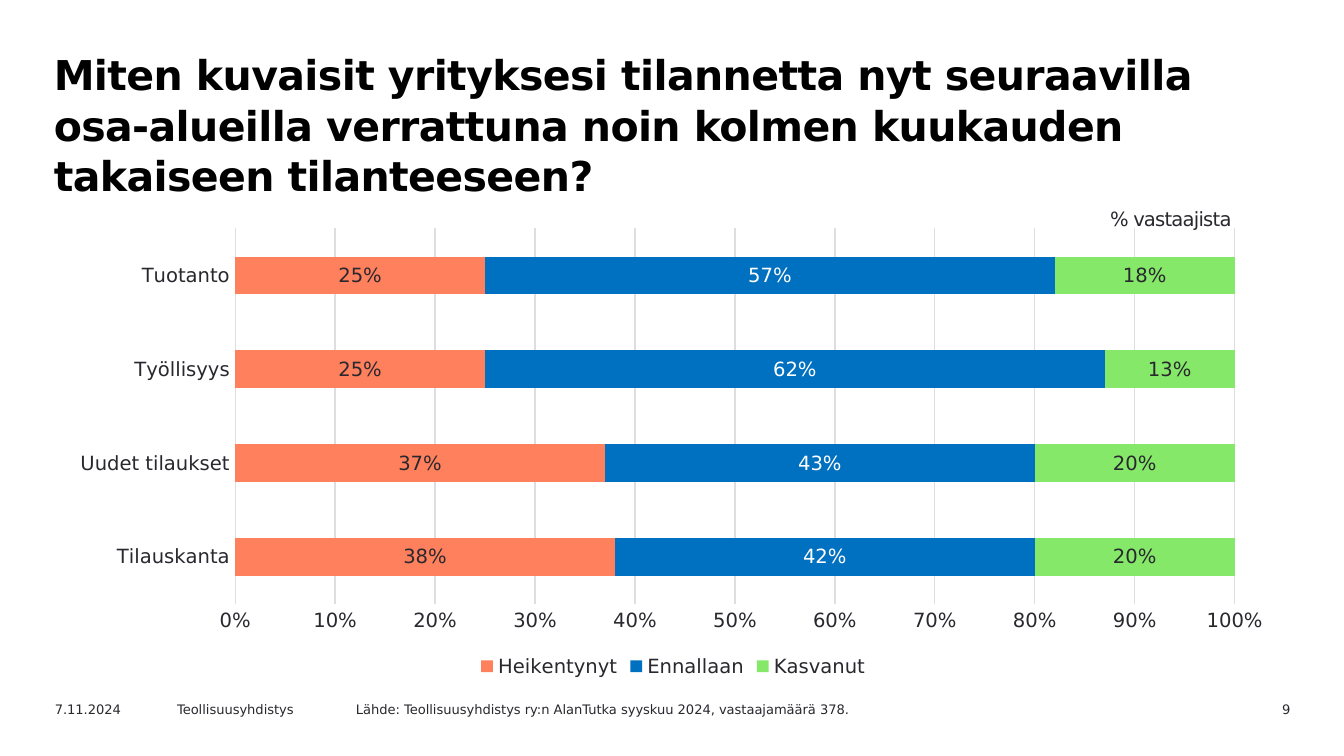
from lxml import etree
from pptx import Presentation
from pptx.chart.data import CategoryChartData
from pptx.dml.color import RGBColor
from pptx.enum.chart import XL_CHART_TYPE as ChartType, XL_LEGEND_POSITION as LegendPos
from pptx.enum.chart import XL_LABEL_POSITION as LabelPos, XL_TICK_MARK as TickMark
from pptx.enum.text import MSO_ANCHOR as Anchor, MSO_AUTO_SIZE as AutoSize, PP_ALIGN as Align
from pptx.oxml.ns import qn
from pptx.util import Pt

INK, GRID = "29282E", "DEDDE1"


def color(value):
    return RGBColor.from_string(value)


def style(font, size, hue=INK, bold=False):
    font.name = "DejaVu Sans"
    font.size = Pt(size)
    font.bold = bold
    font.color.rgb = color(hue)


deck = Presentation()
deck.slide_width, deck.slide_height = Pt(720), Pt(405)
slide = deck.slides.add_slide(deck.slide_layouts[5])

question = slide.shapes.title
question.left, question.top, question.width, question.height = Pt(20.2), Pt(22.3), Pt(629.3), Pt(51)
question.text_frame.text = (
    "Miten kuvaisit yrityksesi tilannetta nyt seuraavilla osa-alueilla "
    "verrattuna noin kolmen kuukauden takaiseen tilanteeseen?"
)
question.text_frame.auto_size = AutoSize.NONE
question.text_frame.vertical_anchor = Anchor.TOP
heading = question.text_frame.paragraphs[0]
heading.alignment = Align.LEFT
heading.line_spacing = Pt(27)
heading._p.get_or_add_pPr().set("marL", str(Pt(1.4)))
heading.runs[0]._r.get_or_add_rPr().set("spc", "-30")
style(heading.font, 22, "000000", True)

answers = CategoryChartData(number_format="0%")
answers.categories = ["Tilauskanta", "Uudet tilaukset", "Työllisyys", "Tuotanto"]
answers.add_series("Heikentynyt", [0.38, 0.37, 0.25, 0.25])
answers.add_series("Ennallaan", [0.42, 0.43, 0.62, 0.57])
answers.add_series("Kasvanut", [0.2, 0.2, 0.13, 0.18])
chart = slide.shapes.add_chart(
    ChartType.BAR_STACKED_100, Pt(30.2), Pt(117.4), Pt(661), Pt(248.4), answers
).chart
style(chart.font, 10.5)
chart.has_title = False
chart.has_legend = True
chart.legend.position = LegendPos.BOTTOM
chart.legend.include_in_layout = False
style(chart.legend.font, 10.5)

bars = chart.plots[0]
bars.gap_width, bars.overlap = 150, 100
bars.vary_by_categories = False
looks = [("FF805C", INK), ("0070C0", "FFFFFF"), ("85E869", INK)]
for series, (fill, label_hue) in zip(bars.series, looks):
    series.format.fill.solid()
    series.format.fill.fore_color.rgb = color(fill)
    labels = series.data_labels
    labels.show_value = True
    labels.number_format, labels.number_format_is_linked = "0%", False
    labels.position = LabelPos.CENTER
    style(labels.font, 10.5, label_hue)

topics, shares = chart.category_axis, chart.value_axis
for axis in (topics, shares):
    axis.major_tick_mark = axis.minor_tick_mark = TickMark.NONE
    style(axis.tick_labels.font, 10.5)
shares.minimum_scale, shares.maximum_scale, shares.major_unit = 0, 1, 0.1
shares.tick_labels.number_format = "0%"
shares.tick_labels.number_format_is_linked = False
shares.format.line.fill.background()
shares.has_major_gridlines = True
for line in (topics.format.line, shares.major_gridlines.format.line):
    line.color.rgb = color(GRID)
    line.width = Pt(0.75)

plot_area = chart._chartSpace.chart.plotArea
for automatic in plot_area.findall(qn("c:layout")):
    plot_area.remove(automatic)
layout = etree.Element(qn("c:layout"))
manual = etree.SubElement(layout, qn("c:manualLayout"))
for tag, value in [("layoutTarget", "inner"), ("xMode", "edge"), ("yMode", "edge"),
                   ("x", "0.145"), ("y", "0.02"), ("w", "0.81"), ("h", "0.81")]:
    etree.SubElement(manual, qn(f"c:{tag}")).set("val", value)
plot_area.insert(0, layout)

captions = [
    ("9", 630.7, 372.2, 67.7, 13, 7, Align.RIGHT),
    ("7.11.2024", 22.3, 372.2, 72, 13, 7, Align.LEFT),
    ("Teollisuusyhdistys", 87.8, 372.2, 102.2, 13, 7, Align.LEFT),
    ("Lähde: Teollisuusyhdistys ry:n AlanTutka syyskuu 2024, vastaajamäärä 378.",
     183.6, 372.2, 368.6, 13, 7, Align.LEFT),
    ("% vastaajista", 591.8, 108, 114.5, 18.7, 10.5, Align.LEFT),
]
for words, left, top, width, height, size, alignment in captions:
    frame = slide.shapes.add_textbox(Pt(left), Pt(top), Pt(width), Pt(height)).text_frame
    frame.word_wrap = True
    frame.text = words
    caption = frame.paragraphs[0]
    caption.alignment = alignment
    style(caption.font, size)

frame.margin_left = frame.margin_right = frame.margin_top = frame.margin_bottom = Pt(2.9)
caption.runs[0]._r.get_or_add_rPr().set("spc", "-40")

deck.save("out.pptx")
